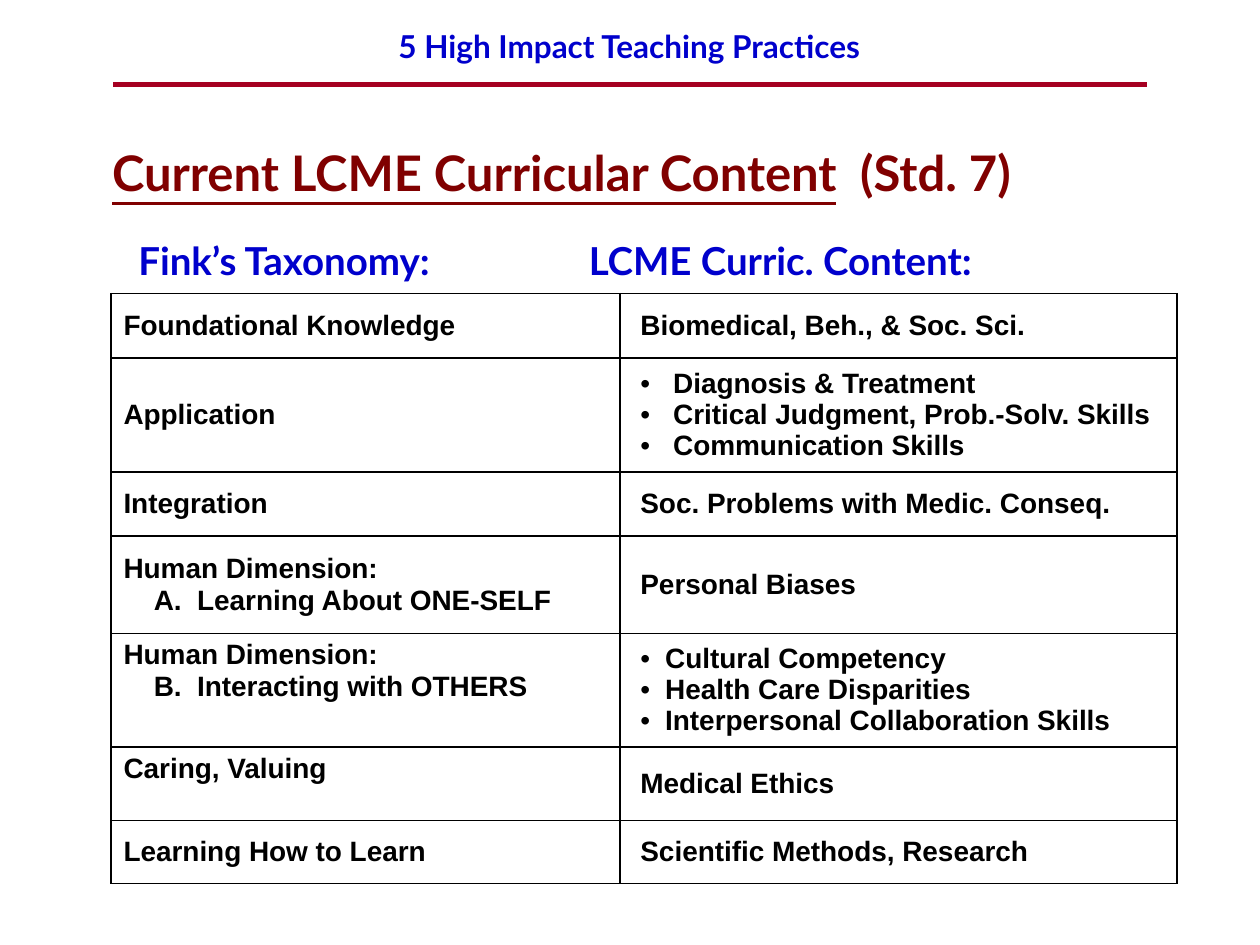
from lxml import etree
from pptx import Presentation
from pptx.dml.color import RGBColor
from pptx.enum.shapes import MSO_CONNECTOR
from pptx.enum.text import MSO_ANCHOR, MSO_AUTO_SIZE, PP_ALIGN
from pptx.oxml.ns import qn
from pptx.util import Cm, Pt

STRAIGHT = MSO_CONNECTOR.STRAIGHT
TOP, MIDDLE = MSO_ANCHOR.TOP, MSO_ANCHOR.MIDDLE
LEFT, CENTER = PP_ALIGN.LEFT, PP_ALIGN.CENTER
FIT_SHAPE = MSO_AUTO_SIZE.SHAPE_TO_FIT_TEXT

BLUE, MAROON, RED, BLACK = "0000CC", "800000", "A50021", "000000"
HEADING_FONT, TABLE_FONT = "Lato", "Arial"

COLUMN_WIDTHS = (10.26, 11.23)
CELL_MARGINS = (0.25, 0.41)
SUBITEM_INDENT = 0.61

# Row height, left anchor, left lines, right lines, bullet hang (0 for none)
ROWS = [
    (1.3, MIDDLE, ["Foundational Knowledge"],
     ["Biomedical, Beh., & Soc. Sci."], 0),
    (2.29, MIDDLE, ["Application"],
     ["Diagnosis & Treatment", "Critical Judgment, Prob.-Solv. Skills",
      "Communication Skills"], 0.66),
    (1.3, MIDDLE, ["Integration"],
     ["Soc. Problems with Medic. Conseq."], 0),
    (1.96, MIDDLE, ["Human Dimension:", "A.  Learning About ONE-SELF"],
     ["Personal Biases"], 0),
    (2.28, TOP, ["Human Dimension:", "B.  Interacting with OTHERS"],
     ["Cultural Competency", "Health Care Disparities",
      "Interpersonal Collaboration Skills"], 0.5),
    (1.48, TOP, ["Caring, Valuing"], ["Medical Ethics"], 0),
    (1.27, MIDDLE, ["Learning How to Learn"],
     ["Scientific Methods, Research"], 0),
]


def color(hex_value):
    return RGBColor.from_string(hex_value)


def add_run(paragraph, text, font_name, size, hex_value, underline=False):
    run = paragraph.add_run()
    run.text = text
    font = run.font
    font.name, font.size, font.bold = font_name, Pt(size), True
    font.underline = underline
    font.color.rgb = color(hex_value)


def add_heading(slide, left, top, width, height, runs, size, hex_value,
                alignment=LEFT):
    """Add one line of text; runs holds pairs of text and underline."""
    box = slide.shapes.add_textbox(Cm(left), Cm(top), Cm(width), Cm(height))
    frame = box.text_frame
    frame.word_wrap = True
    frame.auto_size = FIT_SHAPE
    paragraph = frame.paragraphs[0]
    paragraph.alignment = alignment
    for text, underline in runs:
        add_run(paragraph, text, HEADING_FONT, size, hex_value, underline)
    return paragraph


def add_tab_stop(paragraph, position):
    properties = paragraph._p.get_or_add_pPr()
    tabs = etree.SubElement(properties, qn("a:tabLst"))
    etree.SubElement(tabs, qn("a:tab"), pos=str(Cm(position)), algn="l")


def add_rule(slide, left, right, y, hex_value, width):
    line = slide.shapes.add_connector(STRAIGHT, Cm(left), Cm(y), Cm(right), Cm(y))
    line.line.color.rgb = color(hex_value)
    line.line.width = Pt(width)
    etree.SubElement(line._element.spPr, qn("a:effectLst"))


def indent_paragraph(paragraph, left, hang=0):
    properties = paragraph._p.get_or_add_pPr()
    properties.set("marL", str(Cm(left)))
    properties.set("indent", str(-Cm(hang)))
    if hang:
        etree.SubElement(properties, qn("a:buFont"), typeface=TABLE_FONT)
        etree.SubElement(properties, qn("a:buChar"), char="•")


def set_borders(cell, hex_value, width):
    properties = cell._tc.get_or_add_tcPr()
    for side in ("a:lnL", "a:lnR", "a:lnT", "a:lnB"):
        line = etree.SubElement(properties, qn(side), w=str(Pt(width)))
        fill = etree.SubElement(line, qn("a:solidFill"))
        etree.SubElement(fill, qn("a:srgbClr"), val=hex_value)


def fill_cell(cell, lines, margin, anchor, hang=0):
    set_borders(cell, BLACK, 1)
    cell.fill.background()
    cell.margin_left = Cm(margin)
    cell.vertical_anchor = anchor
    frame = cell.text_frame
    for index, text in enumerate(lines):
        paragraph = frame.add_paragraph() if index else frame.paragraphs[0]
        if hang:
            indent_paragraph(paragraph, hang, hang)
        elif index:
            indent_paragraph(paragraph, SUBITEM_INDENT)
        add_run(paragraph, text, TABLE_FONT, 16, BLACK)


def add_taxonomy_table(slide, left, top):
    height = sum(row[0] for row in ROWS)
    table = slide.shapes.add_table(
        len(ROWS), len(COLUMN_WIDTHS), Cm(left), Cm(top),
        Cm(sum(COLUMN_WIDTHS)), Cm(height)).table
    table.first_row = False
    table.horz_banding = False
    for column, width in zip(table.columns, COLUMN_WIDTHS):
        column.width = Cm(width)
    for index, (row_height, anchor, taxonomy, content, hang) in enumerate(ROWS):
        table.rows[index].height = Cm(row_height)
        fill_cell(table.cell(index, 0), taxonomy, CELL_MARGINS[0], anchor)
        fill_cell(table.cell(index, 1), content, CELL_MARGINS[1], MIDDLE, hang)


def main():
    presentation = Presentation()
    presentation.slide_width, presentation.slide_height = Cm(25.4), Cm(19.05)
    slide = presentation.slides.add_slide(presentation.slide_layouts[6])

    # Running header and rule
    add_heading(slide, 2.74, 0.43, 19.89, 1.02,
                [("5 High Impact Teaching Practices", False)], 18, BLUE, CENTER)
    add_rule(slide, 2.28, 23.12, 1.7, RED, 3)

    # Title
    add_heading(slide, 2.01, 2.74, 21.39, 1.45,
                [("Current LCME Curricular Content", True),
                 ("  (Std. 7)", False)], 28, MAROON)

    # Table with its column headings
    add_taxonomy_table(slide, 2.24, 5.92)
    headings = add_heading(slide, 2.54, 4.65, 20.52, 1.19,
                           [("Fink’s Taxonomy:\tLCME Curric. Content:", False)],
                           22, BLUE)
    add_tab_stop(headings, 9.08)

    presentation.save("out.pptx")


if __name__ == "__main__":
    main()
